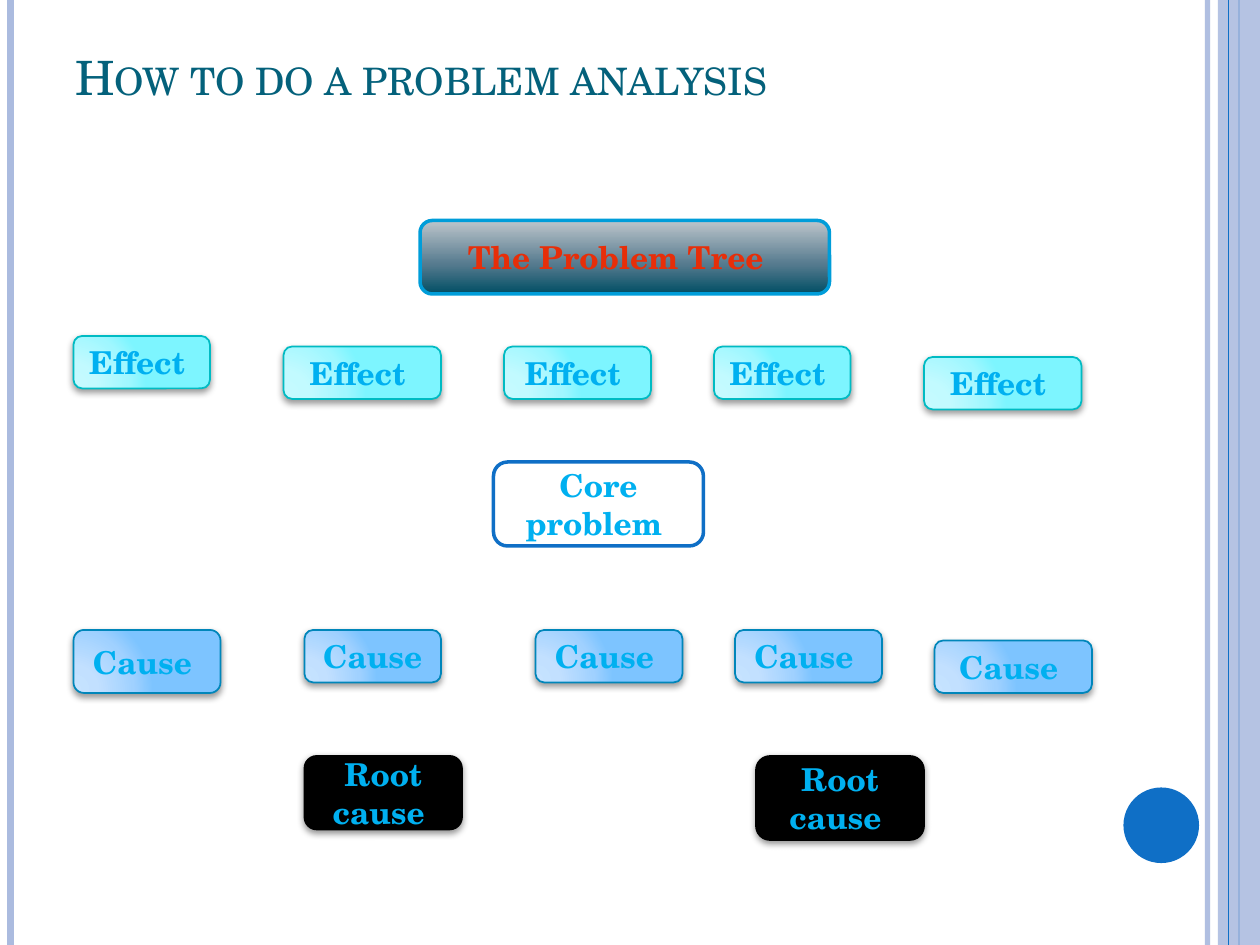
from dataclasses import dataclass

from lxml import etree
from pptx import Presentation, util as u
from pptx.dml.color import RGBColor
from pptx.enum import shapes, text
from pptx.oxml import parse_xml
from pptx.oxml.ns import nsdecls, qn

COLUMNS, ROWS = 120, 90
CELL = u.Inches(1 / 12)


@dataclass(frozen=True)
class Theme:
    font: str = "TeX Gyre Schola"
    title_size: int = 27
    label_size: int = 18
    title: str = "04617B"
    label: str = "00B0F0"
    heading: str = "E72E09"
    accent: str = "0F6FC6"
    rail: str = "ABBBDF"


@dataclass(frozen=True)
class BoxStyle:
    """Fill is a colour or a list of (percent, colour) stops; shadow is (alpha, blur, distance)."""
    fill: object
    line: str
    width: float = 1
    shadow: tuple = ()
    radial: bool = True
    label: str = Theme.label


GLOW = (40, 4, 2)
EFFECT = BoxStyle([(0, "C7FAFF"), (30, "C2FAFF"), (75, "A0F7FF"), (100, "7DF5FF")],
                  "00BBC3", shadow=GLOW)
CAUSE = BoxStyle([(0, "C7E3FF"), (30, "C2E0FF"), (75, "A0D1FF"), (100, "7DC4FF")],
                 "0086BA", shadow=GLOW)
ROOT = BoxStyle("000000", "000000", shadow=(42, 4, 1.6))
CORE = BoxStyle("FFFFFF", Theme.accent, 2)
HEADING = BoxStyle([(0, "004E64"), (40, "557A8E"), (100, "BDC5CB")],
                   "009DD9", 2, radial=False, label=Theme.heading)


def cells(*counts):
    return [round(count * CELL) for count in counts]


def set_alpha(element, percent):
    color = next(element.iter(qn("a:srgbClr")))
    etree.SubElement(color, qn("a:alpha"), val=str(percent * 1000))


class SlideBuilder:
    def __init__(self, slide, theme):
        self.slide = slide
        self.theme = theme

    def rail(self, column, color, width, alpha=100):
        """Vertical line over the full height of the slide."""
        line = self.slide.shapes.add_connector(
            shapes.MSO_CONNECTOR.STRAIGHT, *cells(column, 0, column, ROWS))
        line.line.color.rgb = RGBColor.from_string(color)
        line.line.width = u.Pt(width)
        properties = line._element.spPr
        if alpha < 100:
            set_alpha(properties, alpha)
        etree.SubElement(properties, qn("a:effectLst"))

    def plain(self, kind, area, color, alpha=100):
        """Shape without outline or text."""
        shape = self.slide.shapes.add_shape(kind, *cells(*area))
        shape.shadow.inherit = False
        shape.fill.solid()
        shape.fill.fore_color.rgb = RGBColor.from_string(color)
        shape.line.fill.background()
        if alpha < 100:
            set_alpha(shape._element.spPr, alpha)

    def title(self, wording, area):
        frame = self.slide.shapes.add_textbox(*cells(*area)).text_frame
        frame.word_wrap = True
        frame.vertical_anchor = text.MSO_ANCHOR.TOP
        paragraph = self.label(frame, wording, self.theme.title_size, self.theme.title)
        paragraph.runs[0].font._element.set("cap", "small")

    def box(self, wording, area, style):
        shape = self.slide.shapes.add_shape(
            shapes.MSO_SHAPE.ROUNDED_RECTANGLE, *cells(*area))
        shape.shadow.inherit = False
        if isinstance(style.fill, str):
            shape.fill.solid()
            shape.fill.fore_color.rgb = RGBColor.from_string(style.fill)
        else:
            self.gradient(shape, style)
        shape.line.color.rgb = RGBColor.from_string(style.line)
        shape.line.width = u.Pt(style.width)
        if style.shadow:
            self.drop_shadow(shape, *style.shadow)
        frame = shape.text_frame
        frame.word_wrap = True
        frame.vertical_anchor = text.MSO_ANCHOR.MIDDLE
        paragraph = self.label(frame, wording, self.theme.label_size, style.label)
        paragraph.alignment = text.PP_ALIGN.CENTER
        paragraph.font.bold = True

    def label(self, frame, wording, size, color):
        paragraph = frame.paragraphs[0]
        paragraph.text = wording
        paragraph.font.name = self.theme.font
        paragraph.font.size = u.Pt(size)
        paragraph.font.color.rgb = RGBColor.from_string(color)
        return paragraph

    def gradient(self, shape, style):
        stops = "".join(f'<a:gs pos="{percent * 1000}"><a:srgbClr val="{color}"/></a:gs>'
                        for percent, color in style.fill)
        course = ('<a:path path="circle"><a:fillToRect l="5000" t="100000" '
                  'r="120000" b="10000"/></a:path>'
                  if style.radial else '<a:lin ang="16200000" scaled="0"/>')
        shape.fill.background()
        properties = shape._element.spPr
        properties.replace(properties.find(qn("a:noFill")), parse_xml(
            f'<a:gradFill {nsdecls("a")} rotWithShape="1">'
            f'<a:gsLst>{stops}</a:gsLst>{course}</a:gradFill>'))

    def drop_shadow(self, shape, alpha, blur, distance):
        effects = shape._element.spPr.find(qn("a:effectLst"))
        effects.append(parse_xml(
            f'<a:outerShdw {nsdecls("a")} blurRad="{u.Pt(blur)}" dist="{u.Pt(distance)}" '
            f'dir="5400000" rotWithShape="0"><a:srgbClr val="000000">'
            f'<a:alpha val="{alpha * 1000}"/></a:srgbClr></a:outerShdw>'))


def main():
    presentation = Presentation()
    presentation.slide_width, presentation.slide_height = cells(COLUMNS, ROWS)
    theme = Theme()
    builder = SlideBuilder(
        presentation.slides.add_slide(presentation.slide_layouts[6]), theme)

    builder.rail(115, theme.rail, 3, alpha=93)
    builder.rail(1, theme.rail, 4.5)
    builder.rail(118, theme.accent, 1.5)
    builder.plain(shapes.MSO_SHAPE.RECTANGLE, (116, 0, 4, ROWS), theme.rail, alpha=87)
    builder.rail(117, theme.accent, 0.75)
    builder.plain(shapes.MSO_SHAPE.OVAL, (107, 75, 7.2, 7.2), theme.accent)

    builder.title("How to do a problem analysis", (6, 4, 98, 12))
    builder.box("Core problem ", (47, 44, 20, 8), CORE)
    for left, top, width in ((7, 32, 13), (27, 33, 15), (48, 33, 14),
                             (68, 33, 13), (88, 34, 15)):
        builder.box("Effect ", (left, top, width, 5), EFFECT)
    for left, top, width, height in ((7, 60, 14, 6), (29, 60, 13, 5), (51, 60, 14, 5),
                                     (70, 60, 14, 5), (89, 61, 15, 5)):
        builder.box("Cause ", (left, top, width, height), CAUSE)
    for left, width, height in ((29, 15, 7), (72, 16, 8)):
        builder.box("Root cause ", (left, 72, width, height), ROOT)
    builder.box("The Problem Tree  ", (40, 21, 39, 7), HEADING)

    presentation.save("out.pptx")


if __name__ == "__main__":
    main()
